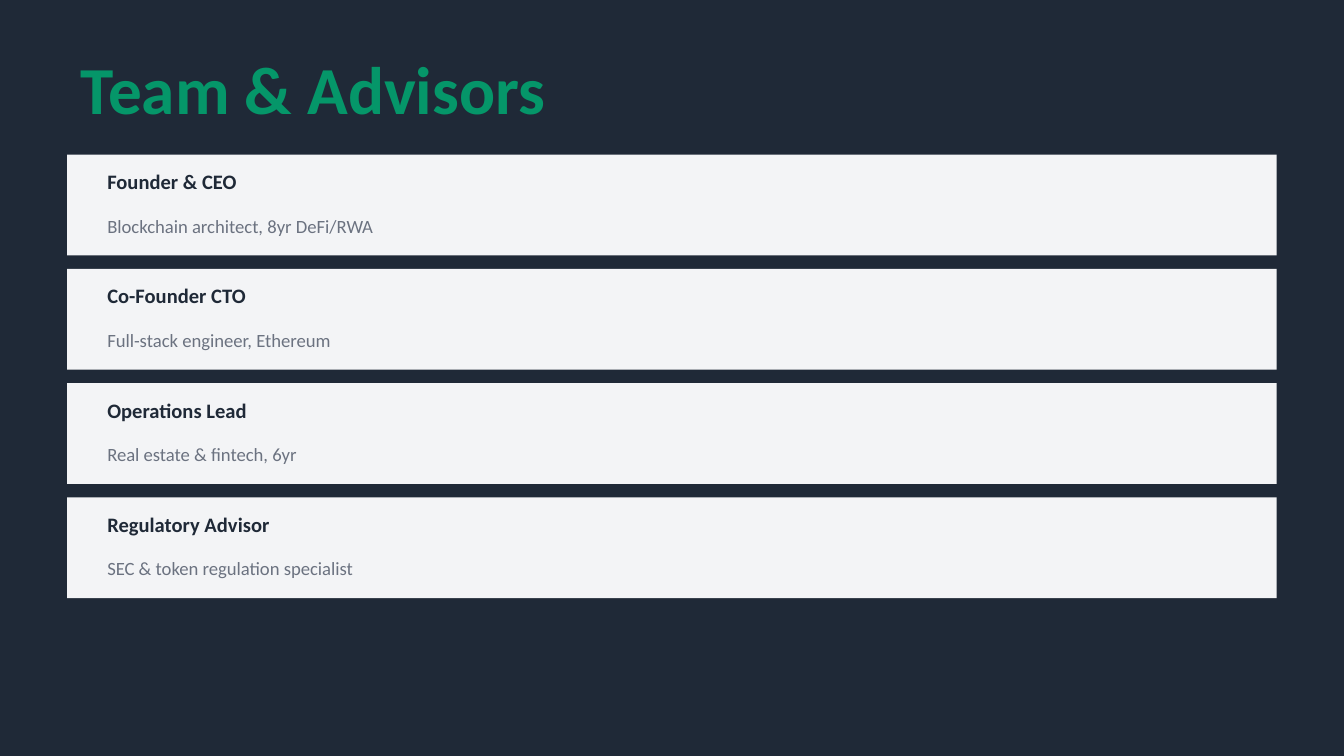
"""Build the team and advisors slide."""
import pptx
import pptx.dml.color
import pptx.enum.shapes
import pptx.enum.text
import pptx.util

NAVY = pptx.dml.color.RGBColor(0x1F, 0x29, 0x37)
GREEN = pptx.dml.color.RGBColor(0x05, 0x96, 0x69)
PALE = pptx.dml.color.RGBColor(0xF3, 0xF4, 0xF6)
GRAY = pptx.dml.color.RGBColor(0x6B, 0x72, 0x80)

MEMBERS = [
    ("Founder & CEO", "Blockchain architect, 8yr DeFi/RWA"),
    ("Co-Founder CTO", "Full-stack engineer, Ethereum"),
    ("Operations Lead", "Real estate & fintech, 6yr"),
    ("Regulatory Advisor", "SEC & token regulation specialist"),
]
TOP, CARD_HEIGHT, GAP = 1.15, 0.75, 0.1


def write(sp, text, size, color, bold=False, font="Calibri"):
    tf = sp.text_frame
    tf.word_wrap = True
    tf.auto_size = pptx.enum.text.MSO_AUTO_SIZE.NONE
    tf.vertical_anchor = pptx.enum.text.MSO_ANCHOR.MIDDLE
    p = tf.paragraphs[0]
    p.alignment = pptx.enum.text.PP_ALIGN.LEFT
    r = p.add_run()
    r.text = text
    r.font.name = font
    r.font.size = pptx.util.Pt(size)
    r.font.bold = bold
    r.font.color.rgb = color


class Deck:
    def __init__(self, prs):
        self.s = prs.slides.add_slide(prs.slide_layouts[5])
        self.s.background.fill.solid()
        self.s.background.fill.fore_color.rgb = NAVY

    def title(self, text, *box):
        sp = self.s.shapes.title
        sp.left, sp.top, sp.width, sp.height = map(pptx.util.Inches, box)
        write(sp, text, size=36, color=GREEN, bold=True)

    def card(self, *box):
        sp = self.s.shapes.add_shape(
            pptx.enum.shapes.MSO_SHAPE.RECTANGLE, *map(pptx.util.Inches, box))
        sp.shadow.inherit = False
        sp.fill.solid()
        sp.fill.fore_color.rgb = PALE
        sp.line.fill.background()

    def text(self, text, *box, **style):
        sp = self.s.shapes.add_textbox(*map(pptx.util.Inches, box))
        write(sp, text, **style)


def main():
    prs = pptx.Presentation()
    prs.slide_width = pptx.util.Inches(10)
    prs.slide_height = prs.slide_width * 9 // 16
    deck = Deck(prs)
    deck.title("Team & Advisors", 0.5, 0.4, 9, 0.5)
    for i, (role, background) in enumerate(MEMBERS):
        y = TOP + i * (CARD_HEIGHT + GAP)
        deck.card(0.5, y, 9, CARD_HEIGHT)
        deck.text(role, 0.7, y + 0.05, 2.8, 0.3, size=11, color=NAVY, bold=True)
        deck.text(background, 0.7, y + 0.38, 8.3, 0.3, size=10, color=GRAY)
    prs.save("out.pptx")


if __name__ == "__main__":
    main()
